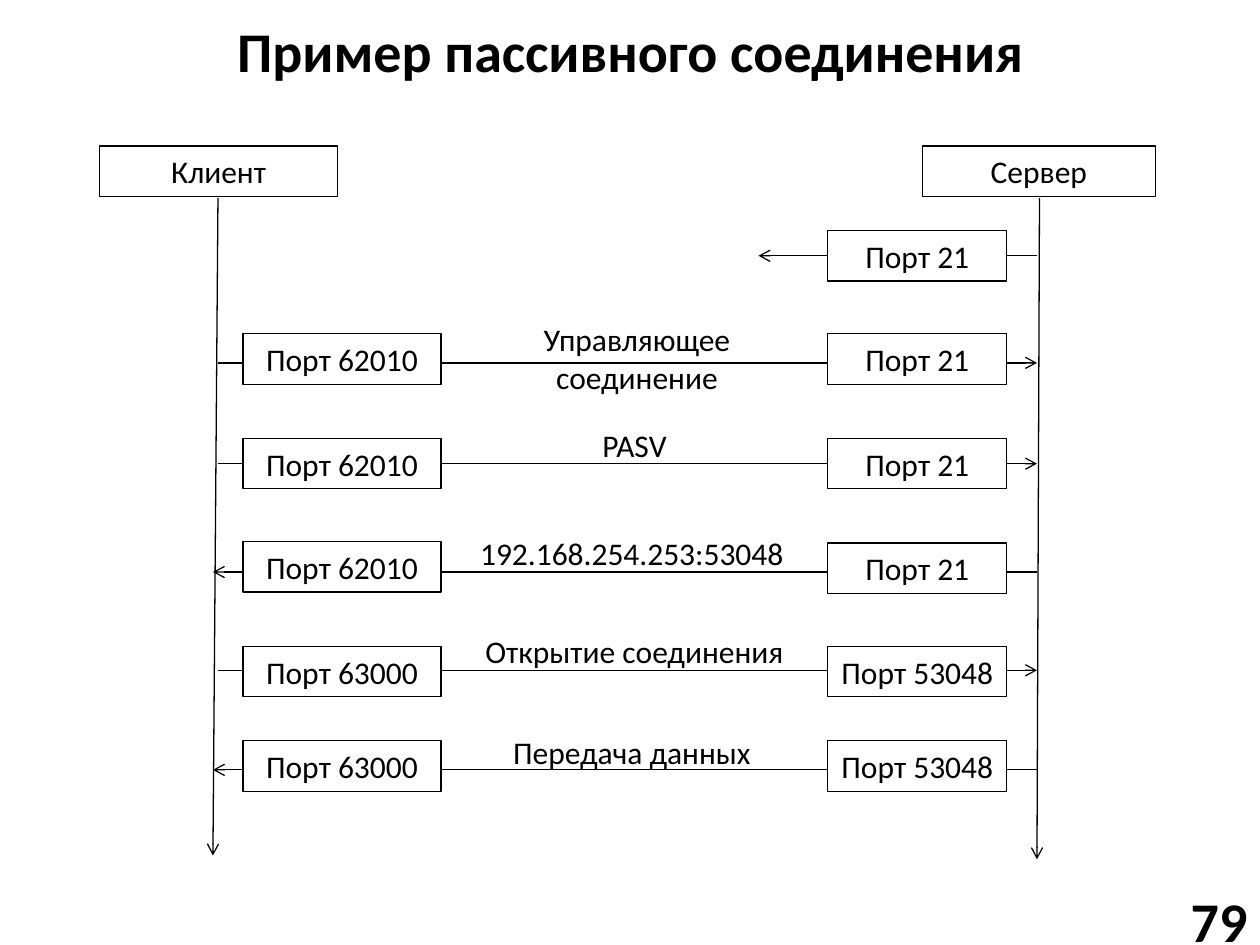
import pptx
import pptx.util
import pptx.dml.color
import pptx.enum.shapes
import pptx.enum.text
import pptx.oxml.ns
import lxml.etree

SCALE = 9144  # EMU per px, 100 px to the inch
COLORS = {"ink": "000000", "paper": "FFFFFF"}
ALIGN = pptx.enum.text.PP_ALIGN
ANCHOR = pptx.enum.text.MSO_ANCHOR


def px(*nums):
    return [pptx.util.Emu(n * SCALE) for n in nums]


def rgb(name):
    return pptx.dml.color.RGBColor.from_string(COLORS[name])


def write(shape, text, size=18, bold=False, align=ALIGN.CENTER, anchor=ANCHOR.TOP):
    frame = shape.text_frame
    frame.word_wrap = True
    frame.auto_size = pptx.enum.text.MSO_AUTO_SIZE.NONE
    frame.vertical_anchor = anchor
    para = frame.paragraphs[0]
    para.alignment = align
    run = para.add_run()
    run.text = text
    run.font.name = "Calibri"
    run.font.size = pptx.util.Pt(size)
    run.font.bold = bold
    run.font.color.rgb = rgb("ink")


class Board:
    width = pptx.util.Pt(0.75)

    def __init__(self, slide):
        self.slide = slide
        self.shapes = slide.shapes

    def title(self, text, x, y, w, h):
        shape = self.shapes.title
        shape.left, shape.top, shape.width, shape.height = px(x, y, w, h)
        write(shape, text, size=32, bold=True, anchor=ANCHOR.MIDDLE)

    def label(self, text, x, y, w, h, **style):
        write(self.shapes.add_textbox(*px(x, y, w, h)), text, **style)

    def box(self, text, x, y, w, h=40, fill="paper"):
        kind = pptx.enum.shapes.MSO_SHAPE.RECTANGLE
        shape = self.shapes.add_shape(kind, *px(x, y, w, h))
        shape.shadow.inherit = False
        if fill:
            shape.fill.solid()
            shape.fill.fore_color.rgb = rgb(fill)
        else:
            shape.fill.background()
        shape.line.color.rgb = rgb("ink")
        shape.line.width = self.width
        write(shape, text)

    def arrow(self, x1, y1, x2, y2):
        kind = pptx.enum.shapes.MSO_CONNECTOR.STRAIGHT
        line = self.shapes.add_connector(kind, *px(x1, y1, x2, y2))
        line.line.color.rgb = rgb("ink")
        line.line.width = self.width
        qn = pptx.oxml.ns.qn
        props = line._element.spPr
        tail = lxml.etree.SubElement(props.find(qn("a:ln")), qn("a:tailEnd"))
        tail.set("type", "arrow")
        lxml.etree.SubElement(props, qn("a:effectLst"))


def main():
    deck = pptx.Presentation()
    deck.slide_width, deck.slide_height = px(1000, 750)
    board = Board(deck.slides.add_slide(deck.slide_layouts[5]))

    # Title and page number
    board.title("Пример пассивного соединения", 28, 5, 945, 69)
    board.label("79", 886, 710, 114, 40, size=32, bold=True,
                align=ALIGN.RIGHT, anchor=ANCHOR.MIDDLE)

    # The two sides and their time lines
    board.box("Клиент", 79, 116, 189, fill=None)
    board.box("Сервер", 732, 116, 185, fill=None)
    board.arrow(173, 157, 169, 679)
    board.arrow(825, 157, 823, 682)

    # Server listens on its port
    board.arrow(823, 203, 602, 203)
    board.box("Порт 21", 657, 183, 142)

    # Messages: to server?, line y, client port, its y, server port, its y,
    # label, its x, y, width, height
    steps = [
        (True, 288, "62010", 265, "21", 265,
         "Управляющее соединение", 358, 249, 295, 71),
        (True, 368, "62010", 348, "21", 348, "PASV", 354, 333, 299, 40),
        (False, 454, "62010", 430, "21", 431,
         "192.168.254.253:53048", 354, 419, 295, 40),
        (True, 532, "63000", 513, "53048", 513,
         "Открытие соединения", 354, 497, 299, 40),
        (False, 611, "63000", 588, "53048", 588,
         "Передача данных", 354, 577, 295, 40),
    ]
    for ahead, y, near, top, far, drop, text, *area in steps:
        start, end = (173, 823) if ahead else (823, 169)
        board.arrow(start, y, end, y)
        board.box(f"Порт {near}", 193, top, 157)
        board.box(f"Порт {far}", 657, drop, 142)
        board.label(text, *area)

    deck.save("out.pptx")


if __name__ == "__main__":
    main()
